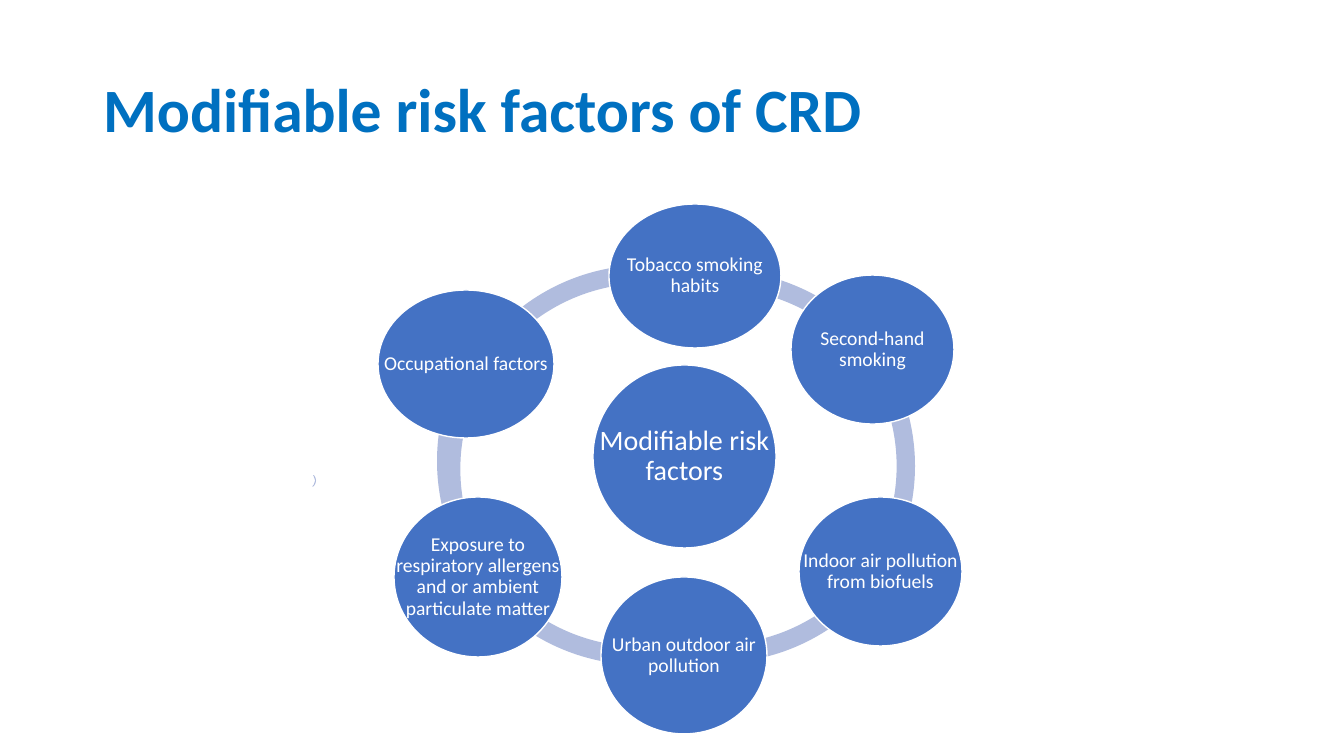
from dataclasses import dataclass

from pptx import Presentation
from pptx.dml.color import RGBColor
from pptx.enum.shapes import MSO_SHAPE
from pptx.enum.text import MSO_ANCHOR, MSO_AUTO_SIZE, PP_ALIGN
from pptx.util import Emu, Pt

BLOCK_ARC, OVAL = MSO_SHAPE.BLOCK_ARC, MSO_SHAPE.OVAL
MIDDLE, NO_AUTOFIT = MSO_ANCHOR.MIDDLE, MSO_AUTO_SIZE.NONE
LEFT, CENTER = PP_ALIGN.LEFT, PP_ALIGN.CENTER

TITLE = "Modifiable risk factors of CRD"
TITLE_BOX = (93, 40, 1159, 146)

# text, box as left, top, width, height in px
CENTRE = ("Modifiable risk factors", (593, 365, 183, 183))
FACTORS = [
    ("Tobacco smoking habits", (609, 204, 172, 144)),
    ("Second-hand smoking", (791, 275, 163, 149)),
    ("Indoor air pollution from biofuels", (799, 497, 163, 149)),
    ("Urban outdoor air pollution", (601, 577, 166, 157)),
    ("Occupational factors", (378, 290, 176, 148)),
    ("Exposure to respiratory allergens and or ambient particulate matter",
     (394, 497, 168, 160)),
]

# left, top, width, height in px, then start and end angle in degrees
RING = 408
ARCS = [
    (442, 265, RING, RING, 147, 284),
    (292, 471, 24, 19, 331, 35),
    (437, 257, RING, RING, 78, 209),
    (512, 255, RING, RING, 34, 99),
    (507, 262, RING, RING, 324, 32),
    (513, 270, RING, RING, 264, 321),
]
ARC_THICKNESS = 0.045
ANGLE_UNIT = 0.6  # adjustment value of one degree


@dataclass(frozen=True)
class Theme:
    font: str = "Calibri"
    title: RGBColor = RGBColor(0x00, 0x70, 0xC0)
    circle: RGBColor = RGBColor(0x44, 0x72, 0xC4)
    arc: RGBColor = RGBColor(0xB0, 0xBC, 0xDE)
    white: RGBColor = RGBColor(0xFF, 0xFF, 0xFF)
    title_size: int = 44
    centre_size: int = 20
    factor_size: int = 14
    outline: int = 1


THEME = Theme()


def px(length):
    return Emu(round(length * 914400 / 100.8))


def place(box):
    return [px(length) for length in box]


def write(frame, text, size, color, alignment, bold=False):
    frame.word_wrap = True
    frame.auto_size = NO_AUTOFIT
    frame.vertical_anchor = MIDDLE
    paragraph = frame.paragraphs[0]
    paragraph.alignment = alignment
    paragraph.line_spacing = 0.9
    run = paragraph.add_run()
    run.text = text
    run.font.name = THEME.font
    run.font.size = Pt(size)
    run.font.bold = bold
    run.font.color.rgb = color


def add_filled(slide, kind, box, color):
    shape = slide.shapes.add_shape(kind, *place(box))
    shape.shadow.inherit = False
    shape.fill.solid()
    shape.fill.fore_color.rgb = color
    return shape


def add_title(slide):
    title = slide.shapes.title
    title.left, title.top, title.width, title.height = place(TITLE_BOX)
    write(title.text_frame, TITLE, THEME.title_size, THEME.title, LEFT, bold=True)


def add_arc(slide, left, top, width, height, start, end):
    arc = add_filled(slide, BLOCK_ARC, (left, top, width, height), THEME.arc)
    arc.line.fill.background()
    values = (start * ANGLE_UNIT, end * ANGLE_UNIT, ARC_THICKNESS)
    for index, value in enumerate(values):
        arc.adjustments[index] = value


def add_circle(slide, text, box, size):
    """Draw a circle with a label that may use its full width."""
    circle = add_filled(slide, OVAL, box, THEME.circle)
    circle.line.color.rgb = THEME.white
    circle.line.width = Pt(THEME.outline)
    frame = slide.shapes.add_textbox(*place(box)).text_frame
    frame.margin_left = frame.margin_right = px(1)
    frame.margin_top = frame.margin_bottom = px(1)
    write(frame, text, size, THEME.white, CENTER)


def main():
    presentation = Presentation()
    presentation.slide_width, presentation.slide_height = px(1344), px(756)
    slide = presentation.slides.add_slide(presentation.slide_layouts[5])
    add_title(slide)
    for arc in ARCS:
        add_arc(slide, *arc)
    add_circle(slide, *CENTRE, THEME.centre_size)
    for text, box in FACTORS:
        add_circle(slide, text, box, THEME.factor_size)
    presentation.save("out.pptx")


if __name__ == "__main__":
    main()
